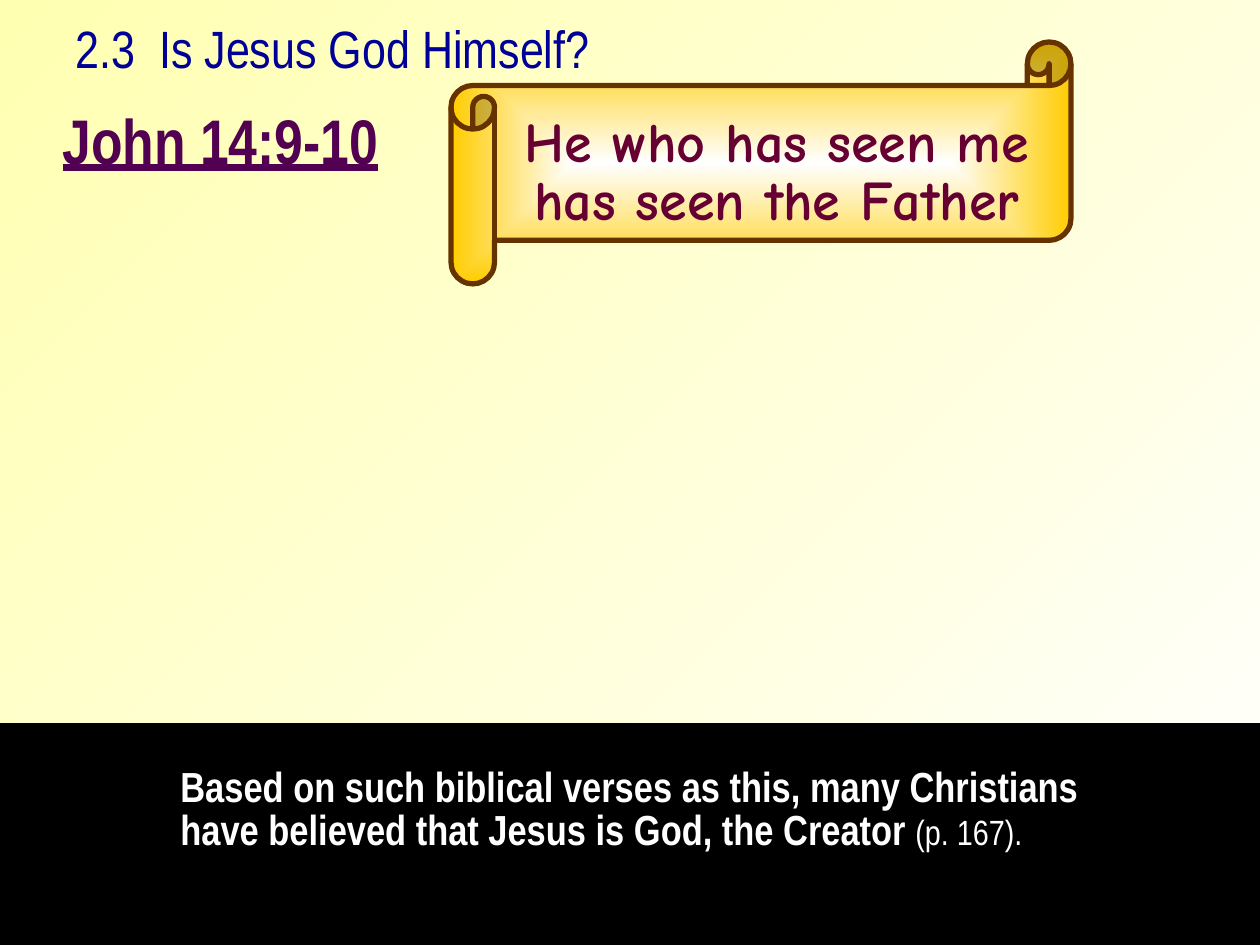
from lxml.etree import SubElement
from pptx import Presentation
from pptx.dml.color import RGBColor
from pptx.enum.shapes import MSO_SHAPE as SHAPE
from pptx.enum.text import MSO_AUTO_SIZE as AUTO_SIZE, PP_ALIGN as ALIGN
from pptx.oxml import parse_xml
from pptx.oxml.ns import nsdecls, qn
from pptx.util import Emu, Pt

PX_PER_INCH = 126
BLACK = RGBColor(0x00, 0x00, 0x00)
WHITE = RGBColor(0xFF, 0xFF, 0xFF)
CREAM = RGBColor(0xFF, 0xFF, 0xB1)
GOLD = RGBColor(0xFF, 0xCC, 0x00)
BROWN = RGBColor(0x66, 0x33, 0x00)
PURPLE = RGBColor(0x52, 0x00, 0x52)
MAROON = RGBColor(0x66, 0x00, 0x33)
NAVY = RGBColor(0x00, 0x00, 0x99)
NARROW = "Arial Narrow"
COMIC = "Comic Neue"


def px(n):
    return Emu(round(n * 914400 / PX_PER_INCH))


def set_gradient(fill, start, end):
    fill.gradient()
    for stop, color, position in zip(fill.gradient_stops, (start, end), (0, 1)):
        stop.color.rgb = color
        stop.position = position


def center_gradient(sp):
    grad = sp._element.spPr.find(qn("a:gradFill"))
    grad.remove(grad.find(qn("a:lin")))
    path = SubElement(grad, qn("a:path"), path="rect")
    SubElement(path, qn("a:fillToRect"), l="50000", t="50000", r="50000", b="50000")


def add_box(shapes, kind, box, line_color, line_width):
    sp = shapes.add_shape(kind, *map(px, box))
    sp.shadow.inherit = False
    sp.line.color.rgb = line_color
    sp.line.width = Pt(line_width)
    return sp


def add_text(shapes, box, paragraphs, font, color, align=ALIGN.LEFT, spacing=None):
    tf = shapes.add_textbox(*map(px, box)).text_frame
    tf.word_wrap = True
    tf.auto_size = AUTO_SIZE.SHAPE_TO_FIT_TEXT
    for i, runs in enumerate(paragraphs):
        p = tf.paragraphs[0] if i == 0 else tf.add_paragraph()
        p.alignment = align
        p.line_spacing = spacing
        for text, size, bold in runs:
            r = p.add_run()
            r.text = text
            r.font.name = font
            r.font.size = Pt(size)
            r.font.bold = bold
            r.font.color.rgb = color
    return tf


def add_text_shadow(r):
    r.font.fill._xPr.find(qn("a:solidFill")).addnext(parse_xml(
        f'<a:effectLst {nsdecls("a")}><a:outerShdw dist="25400" dir="2700000">'
        '<a:srgbClr val="000000"/></a:outerShdw></a:effectLst>'))


def add_scroll(s):
    shapes = s.shapes.add_group_shape().shapes
    scroll = add_box(shapes, SHAPE.HORIZONTAL_SCROLL, (451, 42, 620, 242), BROWN, 3)
    scroll.adjustments[0] = 0.18
    set_gradient(scroll.fill, WHITE, GOLD)
    center_gradient(scroll)
    lines = ("He who has seen me", "has seen the Father")
    add_text(shapes, (504, 111, 546, 127), [[(line, 32, True)] for line in lines],
             COMIC, MAROON, ALIGN.CENTER, 0.85)


def add_footer(s):
    band = add_box(s.shapes, SHAPE.RECTANGLE, (0, 724, 1260, 221), BLACK, 0.75)
    band.fill.solid()
    band.fill.fore_color.rgb = BLACK
    add_text(s.shapes, (168, 762, 935, 98), [[
        ("Based on such biblical verses as this, many Christians "
         "have believed that Jesus is God, the Creator ", 24, True),
        ("(p. 167).", 20, False)]], NARROW, WHITE, spacing=0.85)


def add_verse(s):
    tf = add_text(s.shapes, (42, 95, 357, 88), [[("John 14:9-10", 36, True)]],
                  NARROW, PURPLE, ALIGN.CENTER)
    r = tf.paragraphs[0].runs[0]
    r.font.underline = True
    add_text_shadow(r)


def main():
    prs = Presentation()
    prs.slide_width, prs.slide_height = px(1260), px(945)
    s = prs.slides.add_slide(prs.slide_layouts[6])
    background = s.background.fill
    set_gradient(background, CREAM, WHITE)
    background.gradient_angle = 315
    add_footer(s)
    add_verse(s)
    add_scroll(s)
    add_text(s.shapes, (63, 10, 577, 76), [[("2.3  Is Jesus God Himself?", 30, False)]],
             NARROW, NAVY)
    prs.save("out.pptx")


if __name__ == "__main__":
    main()
